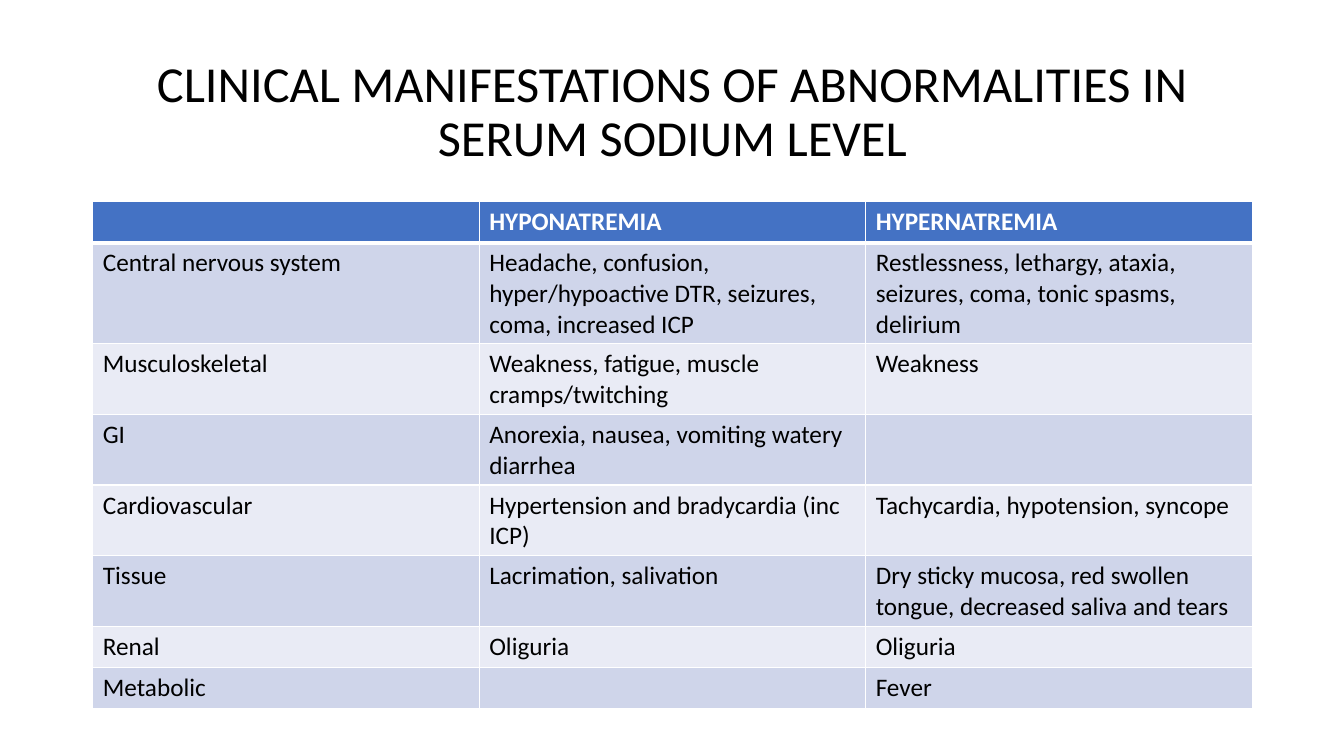
from dataclasses import dataclass

import lxml.etree
import pptx
import pptx.dml.color
import pptx.enum.text
import pptx.oxml.ns
import pptx.util

Inches = pptx.util.Inches
Pt = pptx.util.Pt
Align = pptx.enum.text.PP_ALIGN
Anchor = pptx.enum.text.MSO_ANCHOR


@dataclass(frozen=True)
class Theme:
    font: str = "Calibri"
    title: int = 36
    body: int = 18
    ink: str = "000000"
    paper: str = "FFFFFF"
    head: str = "4472C4"
    bands: tuple = ("CFD5EA", "E9EBF5")
    thin: int = 1
    thick: int = 3


THEME = Theme()

TITLE = "CLINICAL MANIFESTATIONS OF ABNORMALITIES IN SERUM SODIUM LEVEL"
SIGNS = [
    ("", "HYPONATREMIA", "HYPERNATREMIA"),
    ("Central nervous system",
     "Headache, confusion, hyper/hypoactive DTR, seizures, coma, increased ICP",
     "Restlessness, lethargy, ataxia, seizures, coma, tonic spasms, delirium"),
    ("Musculoskeletal", "Weakness, fatigue, muscle cramps/twitching", "Weakness"),
    ("GI", "Anorexia, nausea, vomiting watery diarrhea", ""),
    ("Cardiovascular", "Hypertension and bradycardia (inc ICP)",
     "Tachycardia, hypotension, syncope"),
    ("Tissue", "Lacrimation, salivation",
     "Dry sticky mucosa, red swollen tongue, decreased saliva and tears"),
    ("Renal", "Oliguria", "Oliguria"),
    ("Metabolic", "", "Fever"),
]


def rgb(code):
    return pptx.dml.color.RGBColor.from_string(code)


def write(frame, text, size=THEME.body, color=THEME.ink, bold=False,
          align=Align.LEFT, space=1.0):
    frame.word_wrap = True
    para = frame.paragraphs[0]
    para.alignment = align
    para.line_spacing = space
    para.font.size = Pt(size)
    if text:
        run = para.add_run()
        run.text = text
        run.font.name = THEME.font
        run.font.size = Pt(size)
        run.font.bold = bold
        run.font.color.rgb = rgb(color)


def edge(cell, side, width):
    """Draw one cell border; side is L, R, T or B."""
    qn = pptx.oxml.ns.qn
    props = cell._tc.get_or_add_tcPr()
    line = lxml.etree.SubElement(props, qn(f"a:ln{side}"), w=str(Pt(width)))
    fill = lxml.etree.SubElement(line, qn("a:solidFill"))
    lxml.etree.SubElement(fill, qn("a:srgbClr"), val=THEME.paper)


def add_title(slide, left, top, width, height):
    box = slide.shapes.add_textbox(
        Inches(left), Inches(top), Inches(width), Inches(height))
    box.text_frame.vertical_anchor = Anchor.MIDDLE
    write(box.text_frame, TITLE, size=THEME.title, align=Align.CENTER, space=0.9)


def add_signs(slide, left, top, width, row=0.41):
    count, cols = len(SIGNS), len(SIGNS[0])
    table = slide.shapes.add_table(
        count, cols, Inches(left), Inches(top),
        Inches(width), Inches(row * count)).table
    for r, texts in enumerate(SIGNS):
        head = r == 0
        for c, text in enumerate(texts):
            cell = table.cell(r, c)
            edge(cell, "L", THEME.thin)
            edge(cell, "R", THEME.thin)
            edge(cell, "T", THEME.thick if r == 1 else THEME.thin)
            edge(cell, "B", THEME.thick if head else THEME.thin)
            cell.fill.solid()
            cell.fill.fore_color.rgb = rgb(
                THEME.head if head else THEME.bands[(r - 1) % 2])
            write(cell.text_frame, text, bold=head,
                  color=THEME.paper if head else THEME.ink)


def main():
    deck = pptx.Presentation()
    deck.slide_width = Inches(13.33)
    deck.slide_height = Inches(7.5)
    slide = deck.slides.add_slide(deck.slide_layouts[6])
    add_title(slide, 0.92, 0.4, 11.5, 1.45)
    add_signs(slide, 0.92, 2, 11.5)
    deck.save("out.pptx")


if __name__ == "__main__":
    main()
